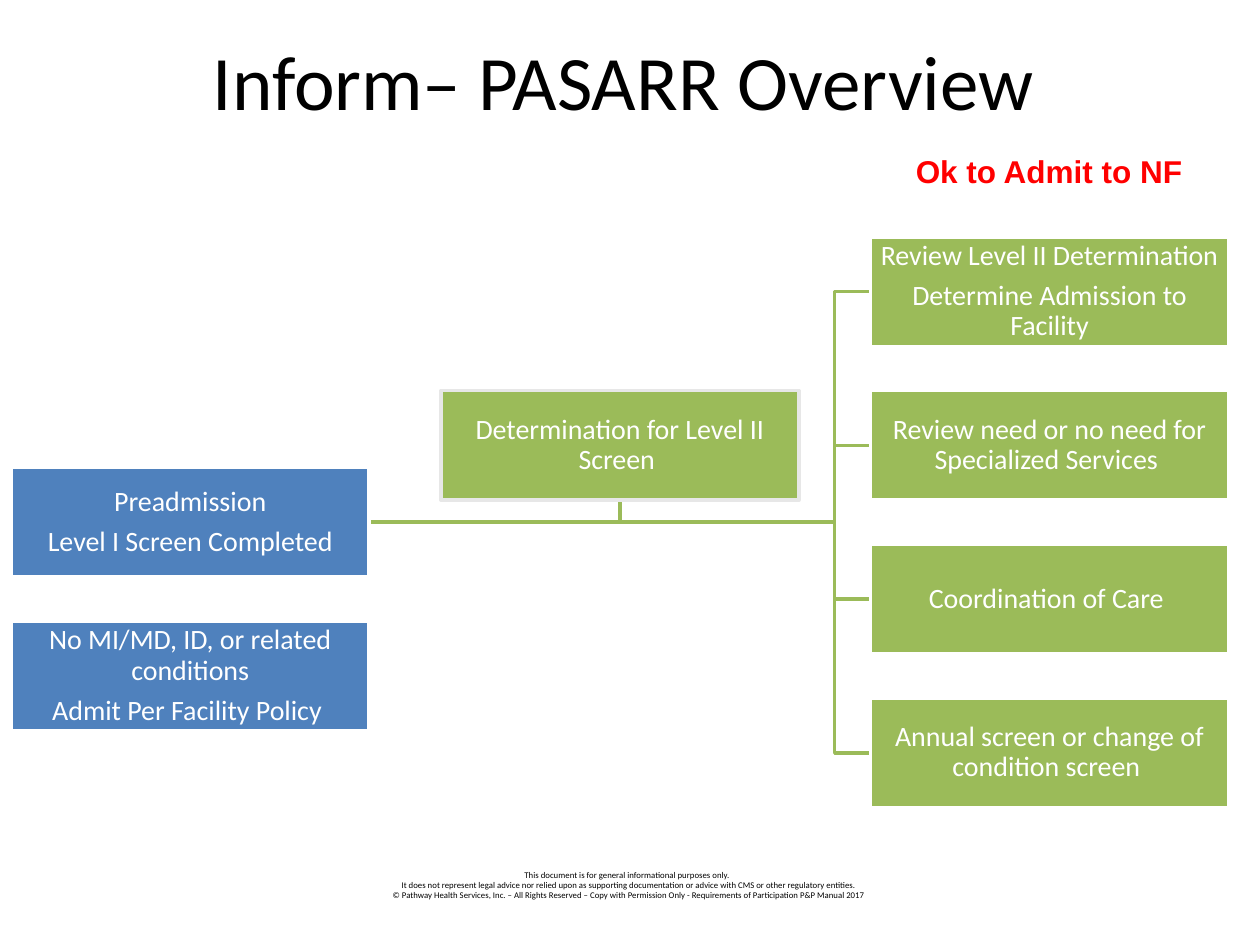
from typing import NamedTuple

from pptx import Presentation
from pptx.dml.color import RGBColor
from pptx.enum.shapes import MSO_SHAPE
from pptx.enum.text import MSO_ANCHOR, PP_ALIGN
from pptx.util import Inches, Pt

BLUE = RGBColor(0x4F, 0x81, 0xBD)
GREEN = RGBColor(0x9B, 0xBB, 0x59)
WHITE = RGBColor(0xFF, 0xFF, 0xFF)
GREY = RGBColor(0xE7, 0xE7, 0xE7)
BLACK = RGBColor(0, 0, 0)
RED = RGBColor(0xFF, 0, 0)

LEFT, TOP = 0.09, 1.88
COL_STEP, ROW_STEP = 3.41, 1.22
BOX_W, BOX_H = 2.84, 0.87


class Box(NamedTuple):
    col: int
    row: float
    lines: tuple[str, ...]
    fill: RGBColor = GREEN
    outline: RGBColor = WHITE

    @property
    def x(self) -> float:
        return LEFT + self.col * COL_STEP

    @property
    def y(self) -> float:
        return TOP + self.row * ROW_STEP

    @property
    def mid_y(self) -> float:
        return self.y + BOX_H / 2


class Label(NamedTuple):
    x: float
    y: float
    w: float
    h: float
    lines: tuple[str, ...]
    size: int
    font: str = "Calibri"
    color: RGBColor = BLACK
    bold: bool = False
    align: PP_ALIGN = PP_ALIGN.CENTER
    anchor: MSO_ANCHOR = MSO_ANCHOR.TOP
    wrap: bool = True


FOOTER = Label(2.83, 6.85, 4.33, 0.35, (
    "This document is for general informational purposes only.  ",
    "It does not represent legal advice nor relied upon as supporting "
    "documentation or advice with CMS or other regulatory entities.",
    "© Pathway Health Services, Inc. – All Rights Reserved – Copy with Permission Only"
    " - Requirements of Participation P&P Manual 2017",
), 5)
TITLE = Label(0.52, 0.01, 9, 1.25, ("Inform– PASARR Overview ",), 44,
              anchor=MSO_ANCHOR.MIDDLE)
ADMIT = Label(7.17, 1.16, 2.34, 0.4, ("Ok to Admit to NF",), 18, "Arial", RED, True,
              PP_ALIGN.LEFT, wrap=False)

SCREEN = Box(0, 1.5, ("Preadmission", "Level I Screen Completed"), BLUE)
POLICY = Box(0, 2.5, ("No MI/MD, ID, or related conditions",
                      "Admit Per Facility Policy "), BLUE)
DETERMINATION = Box(1, 1, ("Determination for Level II Screen ",), outline=GREY)
STEPS = [Box(2, row, lines) for row, lines in enumerate((
    ("Review Level II Determination", "Determine Admission to Facility"),
    ("Review need or no need for Specialized Services ",),
    ("Coordination of Care ",),
    ("Annual screen or change of condition screen ",),
))]


def write(tf, lines: tuple[str, ...], size: int, font: str, color: RGBColor,
          bold: bool = False, align: PP_ALIGN = PP_ALIGN.CENTER) -> None:
    for i, line in enumerate(lines):
        p = tf.paragraphs[0] if i == 0 else tf.add_paragraph()
        p.text = line
        p.alignment = align
        p.font.size = Pt(size)
        p.font.name = font
        p.font.bold = bold
        p.font.color.rgb = color


def draw_label(s, label: Label) -> None:
    tb = s.shapes.add_textbox(*map(Inches, label[:4]))
    tf = tb.text_frame
    tf.word_wrap = label.wrap
    tf.vertical_anchor = label.anchor
    write(tf, label.lines, label.size, label.font, label.color, label.bold, label.align)


def draw_elbow(s, points: list[tuple[float, float]]) -> None:
    start, *rest = [(Inches(x), Inches(y)) for x, y in points]
    builder = s.shapes.build_freeform(*start)
    builder.add_line_segments(rest, close=False)
    sp = builder.convert_to_shape()
    sp.shadow.inherit = False
    sp.fill.background()
    sp.line.color.rgb = GREEN
    sp.line.width = Pt(2)


def draw_box(s, box: Box) -> None:
    sp = s.shapes.add_shape(MSO_SHAPE.RECTANGLE, Inches(box.x), Inches(box.y),
                            Inches(BOX_W), Inches(BOX_H))
    sp.shadow.inherit = False
    sp.fill.solid()
    sp.fill.fore_color.rgb = box.fill
    sp.line.color.rgb = box.outline
    sp.line.width = Pt(2)
    tf = sp.text_frame
    tf.word_wrap = True
    tf.vertical_anchor = MSO_ANCHOR.MIDDLE
    tf.margin_left = tf.margin_right = tf.margin_top = tf.margin_bottom = Inches(0.01)
    write(tf, box.lines, 16, "Calibri", WHITE)
    for p in tf.paragraphs:
        p.line_spacing = 0.9
        p.space_after = Pt(5.6)


def main() -> None:
    prs = Presentation()
    prs.slide_width, prs.slide_height = Inches(10), Inches(7.5)
    s = prs.slides.add_slide(prs.slide_layouts[6])

    draw_label(s, FOOTER)
    draw_label(s, TITLE)

    start = (SCREEN.x + BOX_W, SCREEN.mid_y)
    stem_x = DETERMINATION.x + BOX_W / 2
    draw_elbow(s, [start, (stem_x, SCREEN.mid_y), (stem_x, DETERMINATION.y + BOX_H)])
    for step in reversed(STEPS):
        trunk_x = step.x - (COL_STEP - BOX_W) / 2
        draw_elbow(s, [start, (trunk_x, SCREEN.mid_y), (trunk_x, step.mid_y),
                       (step.x, step.mid_y)])

    for box in (SCREEN, *STEPS, DETERMINATION, POLICY):
        draw_box(s, box)
    draw_label(s, ADMIT)
    prs.save("out.pptx")


if __name__ == "__main__":
    main()
